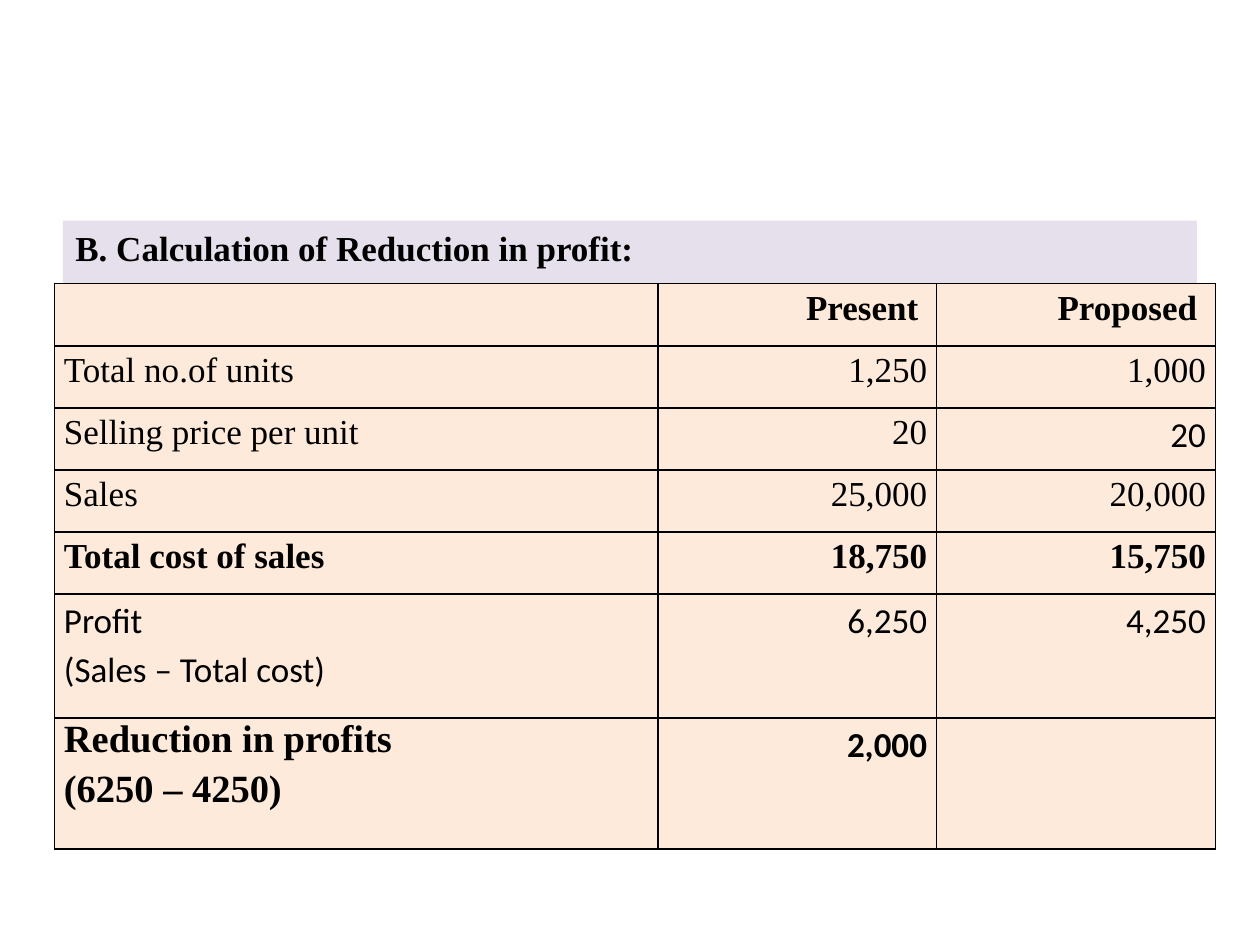
"""Build a slide with a table that works out the reduction in profit."""
from lxml.etree import SubElement as Sub
from pptx import Presentation as Deck
from pptx.dml.color import RGBColor as Rgb
from pptx.enum.shapes import MSO_SHAPE as Shape
from pptx.enum.text import MSO_ANCHOR as Anchor, PP_ALIGN as Align
from pptx.oxml.ns import qn
from pptx.util import Cm, Pt

BLACK = Rgb(0x00, 0x00, 0x00)
LILAC = Rgb(0xE6, 0xE0, 0xEC)
PEACH = Rgb(0xFD, 0xEA, 0xDA)
SERIF, SANS = "Times New Roman", "Calibri"

PLAIN = {"name": SERIF, "size": Pt(20), "bold": False}
BOLD = {**PLAIN, "bold": True}
LIGHT = {**PLAIN, "name": SANS}
STRONG = {**BOLD, "name": SANS}
LARGE = {**BOLD, "size": Pt(22)}

LINE = {"line_spacing": 1.15}
RIGHT = {**LINE, "alignment": Align.RIGHT}
LOOSE = {"space_before": Pt(4.4)}
HEAD = {"space_before": Pt(2), "alignment": Align.LEFT}

WIDTHS = [12.16, 5.62, 5.62]
ROWS = [
    (1.25, ("", BOLD), ("Present ", BOLD), ("Proposed ", BOLD)),
    (1.25, ("Total no.of units", PLAIN), ("1,250", PLAIN), ("1,000", PLAIN)),
    (1.25, ("Selling price per unit", PLAIN), ("20", PLAIN), ("20", LIGHT)),
    (1.25, ("Sales", PLAIN), ("25,000", PLAIN), ("20,000", PLAIN)),
    (1.25, ("Total cost of sales", BOLD), ("18,750", BOLD), ("15,750", BOLD)),
    (2.5, ("Profit\n(Sales – Total cost)", LIGHT), ("6,250", LIGHT), ("4,250", LIGHT)),
    (2.64, ("Reduction in profits\n(6250 – 4250)", LARGE), ("2,000", STRONG), ("", BOLD)),
]


def style(item, look):
    """Set each format value on the item."""
    for name, value in look.items():
        setattr(item, name, value)


def write(frame, text, font, para):
    """Fill a text frame with one paragraph per line of text."""
    frame.text = text
    for part in frame.paragraphs:
        style(part, para)
        style(part.font, font)
        part.font.color.rgb = BLACK


def paint(item, color):
    """Give the item a solid fill."""
    item.fill.solid()
    item.fill.fore_color.rgb = color


def edge(cell):
    """Draw a thin black border on all sides of a cell."""
    props = cell._tc.get_or_add_tcPr()
    for side in ("a:lnL", "a:lnR", "a:lnT", "a:lnB"):
        line = Sub(props, qn(side), w=str(Pt(1)))
        Sub(Sub(line, qn("a:solidFill")), qn("a:srgbClr"), val=str(BLACK))


def add_panel(slide):
    """Add the lilac panel with the heading."""
    panel = slide.shapes.add_shape(Shape.RECTANGLE, Cm(1.27), Cm(4.45), Cm(22.86), Cm(12.57))
    panel.shadow.inherit = False
    paint(panel, LILAC)
    panel.line.fill.background()
    style(panel.text_frame, {"word_wrap": True, "vertical_anchor": Anchor.TOP})
    write(panel.text_frame, "B. Calculation of Reduction in profit:", BOLD, HEAD)


def add_grid(slide):
    """Add the table of present and proposed figures."""
    high = sum(row[0] for row in ROWS)
    frame = slide.shapes.add_table(len(ROWS), len(WIDTHS), Cm(1.1), Cm(5.72),
                                   Cm(sum(WIDTHS)), Cm(high))
    grid = frame.table
    style(grid, {"first_row": False, "horz_banding": False})
    for col, width in zip(grid.columns, WIDTHS):
        col.width = Cm(width)
    pads = {"margin_left": Cm(0.19), "margin_right": Cm(0.19),
            "margin_top": 0, "margin_bottom": 0}
    for row, (height, *items) in zip(grid.rows, ROWS):
        row.height = Cm(height)
        for spot, (cell, (text, font)) in enumerate(zip(row.cells, items)):
            style(cell, pads)
            edge(cell)
            paint(cell, PEACH)
            para = RIGHT if spot else LOOSE if font is LARGE else LINE
            write(cell.text_frame, text, font, para)


def main():
    """Build and save the slide."""
    deck = Deck()
    style(deck, {"slide_width": Cm(25.4), "slide_height": Cm(19.05)})
    slide = deck.slides.add_slide(deck.slide_layouts[6])
    add_panel(slide)
    add_grid(slide)
    deck.save("out.pptx")


if __name__ == "__main__":
    main()
